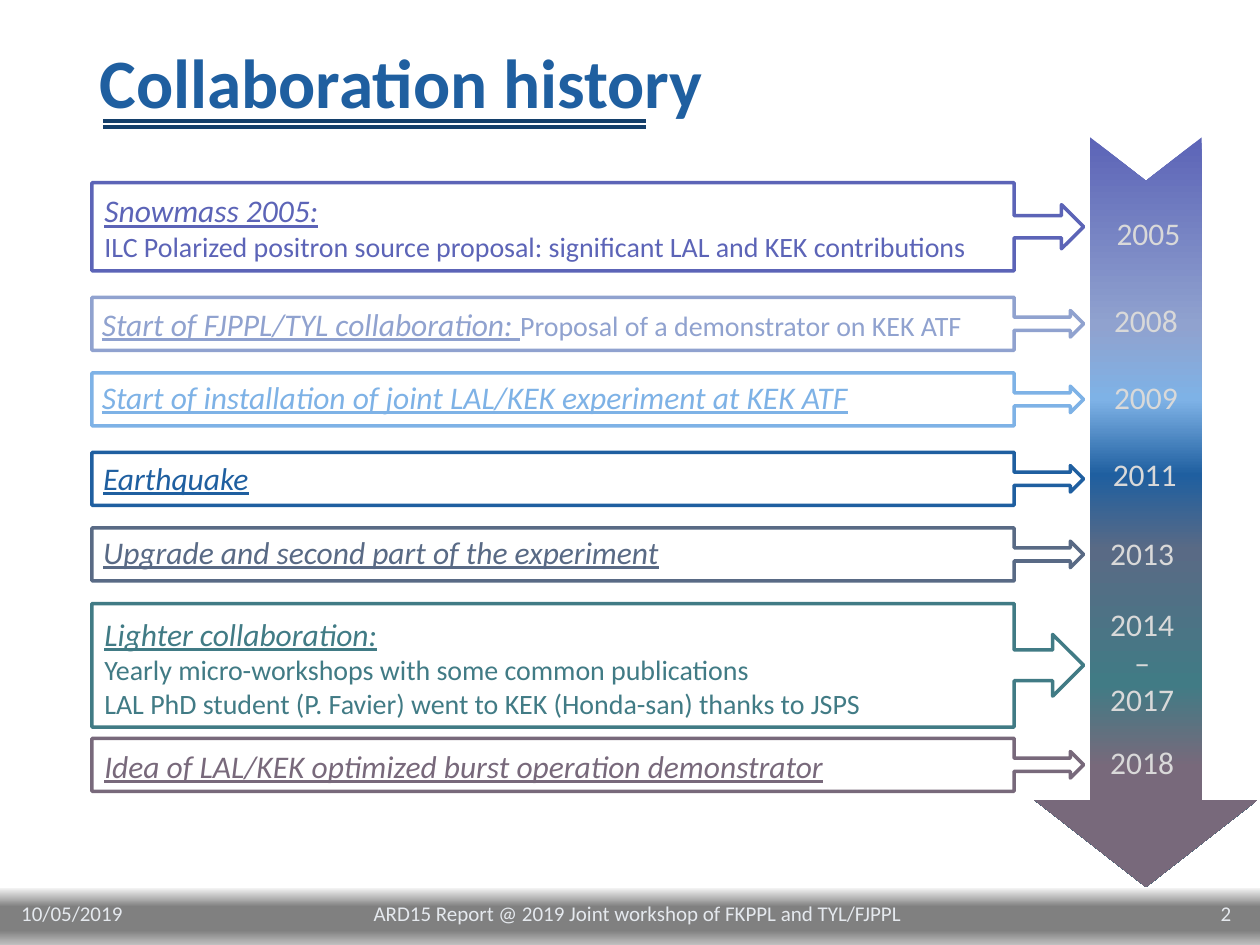
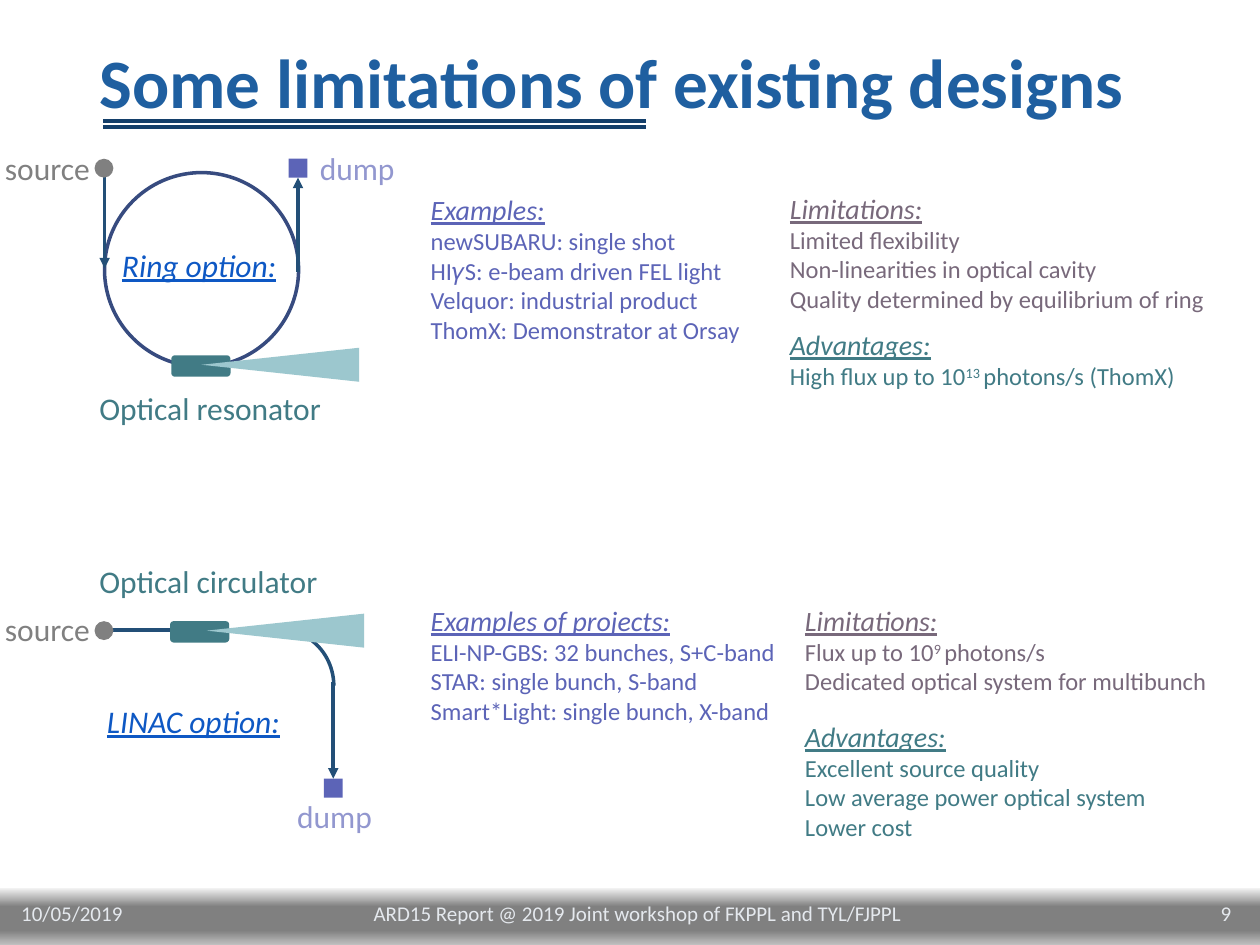
from dataclasses import dataclass

from lxml.etree import SubElement
from pptx import Presentation
from pptx.dml.color import RGBColor
from pptx.enum.shapes import MSO_CONNECTOR as LINK, MSO_SHAPE as SHAPE
from pptx.enum.text import MSO_ANCHOR as ANCHOR, MSO_AUTO_SIZE as FIT, PP_ALIGN as ALIGN
from pptx.oxml.ns import qn
from pptx.util import Inches, Pt


@dataclass(frozen=True)
class Theme:
    font: str = "Calibri"
    # Type sizes in points
    title_size: float = 39.6
    head_size: int = 18
    body_size: int = 16
    small_size: int = 14
    footer_size: int = 12
    line_width: int = 2
    # Colours
    blue: str = "1F5FA0"
    navy: str = "143F6A"
    violet: str = "5C64B7"
    lavender: str = "90A2CF"
    sky: str = "7EB2E6"
    slate: str = "596A85"
    teal: str = "417B85"
    mauve: str = "78697B"
    grey: str = "808080"
    pale: str = "F2F2F2"
    year: str = "D9D9D9"
    footer: str = "E5E9EE"
    ring: str = "374B7F"
    beam: str = "234F77"
    light: str = "9CC7CE"
    dump_label: str = "9297CF"
    option: str = "0E58C4"


THEME = Theme()
COLUMNS, ROWS = 100, 75  # grid of the slide: every cell is a tenth of an inch
WIDTH, HEIGHT = Inches(10), Inches(7.5)


@dataclass(frozen=True)
class Span:
    text: str
    heading: bool = False
    raised: bool = False


@dataclass(frozen=True)
class Event:
    colour: str
    top: float
    height: float
    text_at: tuple
    lines: list
    year_at: tuple
    years: tuple


def head(text):
    return Span(text, heading=True)


def raised(text):
    return Span(text, raised=True)


# ---- Drawing helpers: lengths are columns and rows of the grid ----
def across(columns):
    return round(WIDTH * columns / COLUMNS)


def down(rows):
    return round(HEIGHT * rows / ROWS)


def place(area):
    left, top, width, height = area
    return across(left), down(top), across(width), down(height)


def rgb(colour):
    return RGBColor.from_string(colour)


def write(frame, lines, *, size, colour, head_size=None, bold=None,
          align=ALIGN.LEFT, anchor=ANCHOR.TOP, spacing=None, wrap=True, fit=FIT.NONE):
    """Fill a text frame; a line is a string, a Span or a list of them."""
    frame.word_wrap, frame.auto_size, frame.vertical_anchor = wrap, fit, anchor
    for index, line in enumerate(lines):
        para = frame.add_paragraph() if index else frame.paragraphs[0]
        para.alignment, para.line_spacing = align, spacing
        for part in line if isinstance(line, list) else [line]:
            part = Span(part) if isinstance(part, str) else part
            span = para.add_run()
            span.text = part.text
            font = span.font
            font.name, font.bold = THEME.font, bold
            font.size = Pt(head_size if part.heading and head_size else size)
            font.color.rgb = rgb(colour)
            if part.heading:
                font.italic = font.underline = True
            if part.raised:
                span._r.get_or_add_rPr().set("baseline", "30000")


def add_text(page, area, lines, **text_format):
    box = page.shapes.add_textbox(*place(area))
    write(box.text_frame, lines, **text_format)
    return box


def add_label(page, left, top, width, lines, colour, align=ALIGN.LEFT):
    add_text(page, (left, top, width, 4 if len(lines) == 1 else 10.1), lines,
             size=THEME.head_size, colour=colour, align=align, wrap=False,
             fit=FIT.SHAPE_TO_FIT_TEXT)


def add_shape(page, kind, area, fill=None, line=None, rotation=0, adjust=()):
    shape = page.shapes.add_shape(kind, *place(area))
    shape.shadow.inherit = False
    shape.rotation = rotation
    for index, value in enumerate(adjust):
        shape.adjustments[index] = value
    if fill:
        shape.fill.solid()
        shape.fill.fore_color.rgb = rgb(fill)
    else:
        shape.fill.background()
    if line:
        shape.line.color.rgb = rgb(line)
        shape.line.width = Pt(THEME.line_width)
    else:
        shape.line.fill.background()
    return shape


def add_gradient(shape, stops, angle):
    """Replace the solid fill by a linear gradient of (percent, colour) stops."""
    properties = shape.element.spPr
    solid = properties.find(qn("a:solidFill"))
    gradient = solid.makeelement(qn("a:gradFill"), {"rotWithShape": "1"})
    stop_list = SubElement(gradient, qn("a:gsLst"))
    for percent, colour in stops:
        stop = SubElement(stop_list, qn("a:gs"), pos=str(percent * 1000))
        SubElement(stop, qn("a:srgbClr"), val=colour)
    SubElement(gradient, qn("a:lin"), ang=str(angle * 60000), scaled="0")
    properties.replace(solid, gradient)


def add_line(page, start, end, colour, arrow=False, target=None, side=0):
    line = page.shapes.add_connector(LINK.STRAIGHT, across(start[0]), down(start[1]),
                                     across(end[0]), down(end[1]))
    line.line.color.rgb = rgb(colour)
    line.line.width = Pt(THEME.line_width)
    if target is not None:
        line.end_connect(target, side)
    properties = line.element.spPr
    if arrow:
        SubElement(properties.find(qn("a:ln")), qn("a:tailEnd"), type="triangle")
    SubElement(properties, qn("a:effectLst"))


# ---- What the slides share ----
def add_page(deck, title, number):
    page = deck.slides.add_slide(deck.slide_layouts[5])
    # Footer band and double rule under the title
    band = add_shape(page, SHAPE.RECTANGLE, (0, 70.5, COLUMNS, 5.4), THEME.grey)
    add_gradient(band, [(0, THEME.pale), (27, THEME.grey), (62, THEME.grey),
                        (100, THEME.pale)], 90)
    for row in (9.6, 10.1):
        add_line(page, (8.2, row), (51.3, row), THEME.navy)
    # Title
    box = page.shapes.title
    box.left, box.top, box.width, box.height = place((6.9, 4, 86.2, 5.6))
    write(box.text_frame, [title], size=THEME.title_size, colour=THEME.blue,
          bold=True, anchor=ANCHOR.MIDDLE, spacing=0.9)
    # Footer texts
    for left, width, text, align in (
            (0.7, 12.4, "10/05/2019", ALIGN.LEFT),
            (19.2, 62.8, "ARD15 Report @ 2019 Joint workshop of FKPPL and TYL/FJPPL",
             ALIGN.CENTER),
            (87.6, 11.1, str(number), ALIGN.RIGHT)):
        add_text(page, (left, 70.5, width, 4), [text], size=THEME.footer_size,
                 colour=THEME.footer, align=align, anchor=ANCHOR.MIDDLE)
    return page


# ---- Timeline ----
EVENTS = [
    Event(THEME.violet, 14.5, 7, (7.3, 14.7),
          [head("Snowmass 2005:"),
           "ILC Polarized positron source proposal: significant LAL and KEK contributions"],
          (87.6, 16.5), ("2005",)),
    Event(THEME.lavender, 23.6, 4.2, (7.1, 23.7),
          [[head("Start of FJPPL/TYL collaboration: "),
            "Proposal of a demonstrator on KEK ATF"]], (87.4, 23.4), ("2008",)),
    Event(THEME.sky, 29.6, 4.2, (7.1, 29.5),
          [head("Start of installation of joint LAL/KEK experiment at KEK ATF")],
          (87.4, 29.5), ("2009",)),
    Event(THEME.blue, 35.9, 4.2, (7.2, 35.9), [head("Earthquake")],
          (87.3, 35.6), ("2011",)),
    Event(THEME.slate, 41.9, 4.2, (7.2, 41.8),
          [head("Upgrade and second part of the experiment")], (87.1, 41.9), ("2013",)),
    Event(THEME.teal, 47.9, 9.8, (7.3, 48.3),
          [head("Lighter collaboration:"),
           "Yearly micro-workshops with some common publications",
           "LAL PhD student (P. Favier) went to KEK (Honda-san) thanks to JSPS"],
          (87.1, 47.5), ("2014", "–", "2017")),
    Event(THEME.mauve, 58.6, 4.2, (7.3, 58.8),
          [head("Idea of LAL/KEK optimized burst operation demonstrator")],
          (87.1, 58.5), ("2018",)),
]


def add_time_arrow(page):
    arrow = add_shape(page, SHAPE.NOTCHED_RIGHT_ARROW, (61.2, 31.8, 59.5, 17.7),
                      THEME.blue, rotation=90, adjust=(0.5, 0.39))
    percents = (0, 25, 35, 45, 55, 73, 84)
    stops = [(percent, event.colour) for percent, event in zip(percents, EVENTS)]
    add_gradient(arrow, stops + [(100, THEME.mauve)], 0)


def add_event(page, event):
    add_text(page, (*event.text_at, 76.9, event.height - 0.2), event.lines,
             size=THEME.body_size, head_size=THEME.head_size, colour=event.colour,
             fit=FIT.SHAPE_TO_FIT_TEXT)
    add_shape(page, SHAPE.RIGHT_ARROW_CALLOUT, (7.3, event.top, 78.7, event.height),
              line=event.colour, adjust=(0.25, 0.25, 0.25, 0.93))
    add_label(page, *event.year_at, 7.1, event.years, THEME.year, ALIGN.CENTER)


# ---- Accelerator sketches ----
SPOT = 1.5  # size of the source and dump markers


def add_source(page, top, label_top):
    add_shape(page, SHAPE.OVAL, (7.5, top, SPOT, SPOT), THEME.grey)
    add_label(page, -0.6, label_top, 8.8, ["source"], THEME.grey)


def add_dump(page, left, top, label_at):
    add_label(page, *label_at, 8, ["dump"], THEME.dump_label)
    return add_shape(page, SHAPE.RECTANGLE, (left, top, SPOT, SPOT), THEME.violet)


def add_optics(page, left, top, cone_left, label, label_top):
    add_shape(page, SHAPE.ROUNDED_RECTANGLE, (left, top, 4.7, 1.7), THEME.teal)
    add_shape(page, SHAPE.ISOSCELES_TRIANGLE, (cone_left, top - 5.5, 2.7, 12.5),
              THEME.light, rotation=270)
    add_label(page, 6.9, label_top, 19.8, [label], THEME.teal)


def add_ring(page):
    add_shape(page, SHAPE.OVAL, (8.3, 13.7, 15.4, 15.4), line=THEME.ring)
    add_line(page, (8.3, 13.7), (8.3, 21.3), THEME.beam, arrow=True)
    add_source(page, 12.6, 11.3)
    dump = add_dump(page, 22.9, 12.6, (24.4, 11.3))
    add_line(page, (23.65, 21.6), (23.65, 14.1), THEME.beam, True, dump, 2)
    add_optics(page, 13.6, 28.2, 20.9, "Optical resonator", 30.4)
    add_label(page, 8.7, 19, 14.4, [head("Ring option:")], THEME.option)


def add_linac(page):
    add_line(page, (9, 50), (22.2, 50), THEME.beam)
    add_source(page, 49.3, 47.9)
    # Arc angles in degrees; one adjustment unit is 100000/60000 degrees
    add_shape(page, SHAPE.ARC, (18.1, 50, 8.4, 8.9), line=THEME.beam,
              adjust=[degrees * 0.6 for degrees in (268.8, 359.5)])
    dump = add_dump(page, 25.7, 61.8, (22.6, 62.8))
    add_line(page, (26.45, 54.1), (26.45, 61.8), THEME.beam, True, dump, 0)
    add_optics(page, 13.5, 49.3, 21.3, "Optical circulator", 44.1)
    add_label(page, 7.5, 55.2, 15.9, [head("LINAC option:")], THEME.option)


NOTES = [
    ((33.2, 14.8, 27.3, 13.5), THEME.violet,
     [head("Examples:"), "newSUBARU: single shot", "HI𝛾S: e-beam driven FEL light",
      "Velquor: industrial product", "ThomX: Demonstrator at Orsay"]),
    ((61.7, 14.7, 35.8, 10.8), THEME.mauve,
     [head("Limitations:"), "Limited flexibility", "Non-linearities in optical cavity",
      "Quality determined by equilibrium of ring"]),
    ((61.7, 25.5, 35.8, 6.1), THEME.teal,
     [head("Advantages:"),
      ["High flux up to 10", raised("13 "), "photons/s (ThomX)"]]),
    ((33.2, 47.4, 29.9, 10.8), THEME.violet,
     [head("Examples of projects:"), "ELI-NP-GBS: 32 bunches, S+C-band",
      "STAR: single bunch, S-band", "Smart*Light: single bunch, X-band"]),
    ((62.9, 47.4, 35.8, 8.4), THEME.mauve,
     [head("Limitations:"), ["Flux up to 10", raised("9 "), "photons/s"],
      "Dedicated optical system for multibunch"]),
    ((62.9, 56.6, 37.1, 10.8), THEME.teal,
     [head("Advantages:"), "Excellent source quality",
      "Low average power optical system", "Lower cost"]),
]


def main():
    deck = Presentation()
    deck.slide_width, deck.slide_height = WIDTH, HEIGHT

    history = add_page(deck, "Collaboration history", 2)
    add_time_arrow(history)
    for event in EVENTS:
        add_event(history, event)

    designs = add_page(deck, "Some limitations of existing designs", 9)
    add_ring(designs)
    add_linac(designs)
    for area, colour, lines in NOTES:
        add_text(designs, area, lines, size=THEME.small_size, head_size=THEME.body_size,
                 colour=colour, fit=FIT.SHAPE_TO_FIT_TEXT)

    deck.save("out.pptx")


if __name__ == "__main__":
    main()
